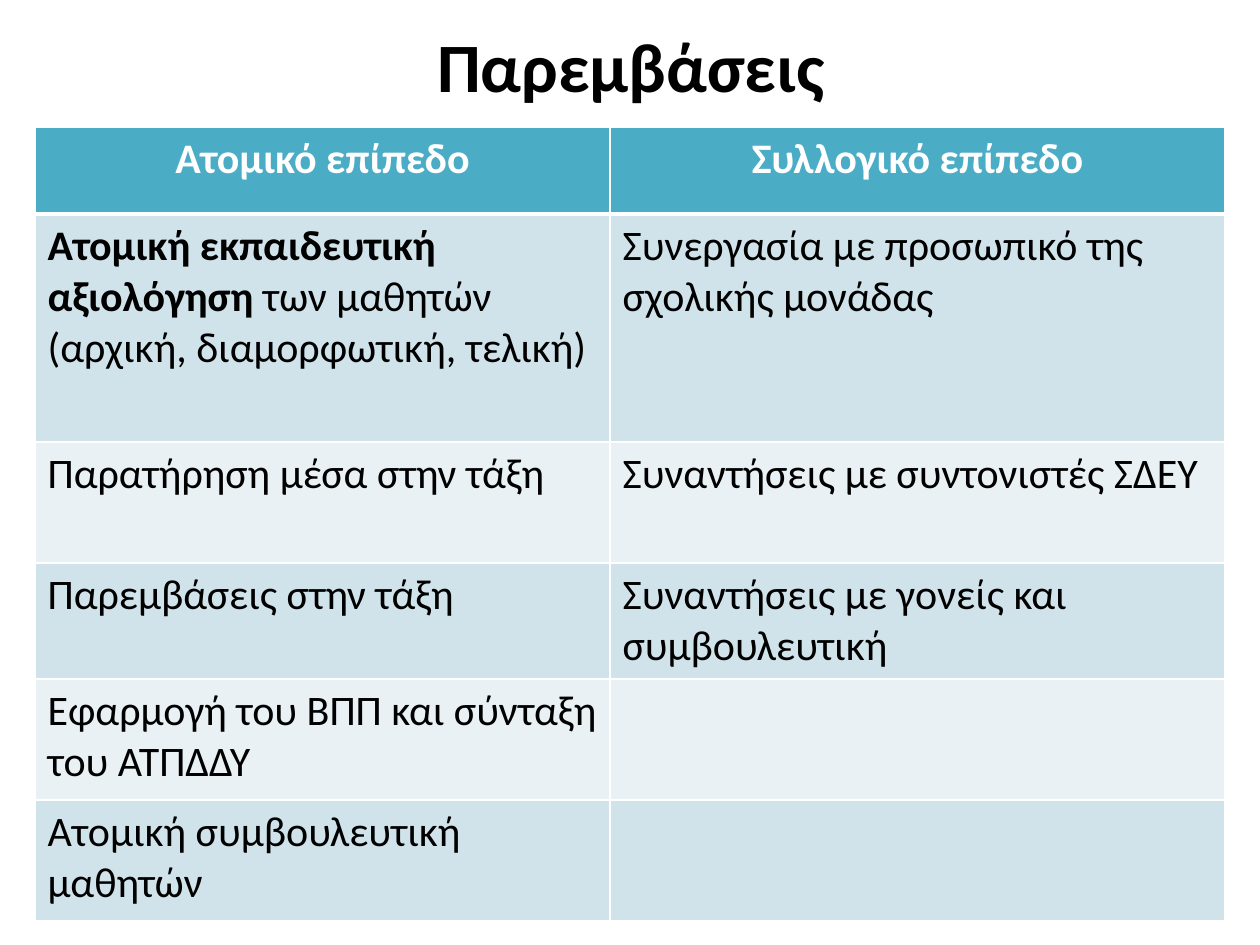
from pptx import Presentation
from pptx.dml.color import RGBColor
from pptx.enum.text import MSO_ANCHOR as Anchor, PP_ALIGN as Align
from pptx.oxml import parse_xml
from pptx.oxml.ns import nsdecls
from pptx.util import Pt

SCALE = 914400 / 126


def px(n):
    return round(n * SCALE)


def color(text):
    return RGBColor.from_string(text)


class Deck:
    """Draws text and tables on one slide in a shared style."""

    font = "Calibri"
    ink, white = "000000", "FFFFFF"
    head, bands = "4BACC6", ("D0E3EA", "E9F1F5")

    def __init__(self, wide, high):
        self.prs = Presentation()
        self.prs.slide_width, self.prs.slide_height = px(wide), px(high)
        self.slide = self.prs.slides.add_slide(self.prs.slide_layouts[6])

    def label(self, frame, parts, size, ink, align):
        para = frame.paragraphs[0]
        para.alignment = align
        for text, bold in parts:
            run = para.add_run()
            run.text = text
            run.font.name, run.font.size, run.font.bold = self.font, Pt(size), bold
            run.font.color.rgb = color(ink)

    def title(self, text, box, size):
        frame = self.slide.shapes.add_textbox(*map(px, box)).text_frame
        frame.word_wrap = True
        frame.vertical_anchor = Anchor.MIDDLE
        self.label(frame, [(text, True)], size, self.ink, Align.CENTER)

    def edge(self, cell, side, width):
        cell._tc.get_or_add_tcPr().append(parse_xml(
            f'<a:ln{side} {nsdecls("a")} w="{Pt(width)}"><a:solidFill>'
            f'<a:srgbClr val="{self.white}"/></a:solidFill></a:ln{side}>'))

    def table(self, rows, left, top, widths, heights, size):
        box = map(px, (left, top, sum(widths), sum(heights)))
        grid = self.slide.shapes.add_table(len(rows), len(widths), *box).table
        for col, wide in zip(grid.columns, widths):
            col.width = px(wide)
        for r, (row, high) in enumerate(zip(rows, heights)):
            grid.rows[r].height = px(high)
            for c, parts in enumerate(row):
                cell = grid.cell(r, c)
                for side in "LRTB":
                    thick = (r, side) in ((0, "B"), (1, "T"))
                    self.edge(cell, side, 3 if thick else 1)
                cell.fill.solid()
                cell.fill.fore_color.rgb = color(self.bands[(r - 1) % 2] if r else self.head)
                self.label(cell.text_frame, parts, size, self.ink if r else self.white,
                           Align.LEFT if r else Align.CENTER)


def plain(text):
    return [(text, False)]


rows = [
    [[("Ατομικό επίπεδο", True)], [("Συλλογικό επίπεδο", True)]],
    [[("Ατομική εκπαιδευτική αξιολόγηση ", True),
      ("των μαθητών (αρχική, διαμορφωτική, τελική)", False)],
     plain("Συνεργασία με προσωπικό της σχολικής μονάδας")],
    [plain("Παρατήρηση μέσα στην τάξη "), plain("Συναντήσεις με συντονιστές ΣΔΕΥ")],
    [plain("Παρεμβάσεις στην τάξη"), plain("Συναντήσεις με γονείς και συμβουλευτική")],
    [plain("Εφαρμογή του ΒΠΠ και σύνταξη του ΑΤΠΔΔΥ"), []],
    [plain("Ατομική συμβουλευτική μαθητών "), []],
]

deck = Deck(1260, 945)
deck.title("Παρεμβάσεις", (64, 16, 1134, 97), 39.6)
deck.table(rows, 35, 127, (575, 615), (87, 228, 121, 116, 121, 121), 24)
deck.prs.save("out.pptx")
